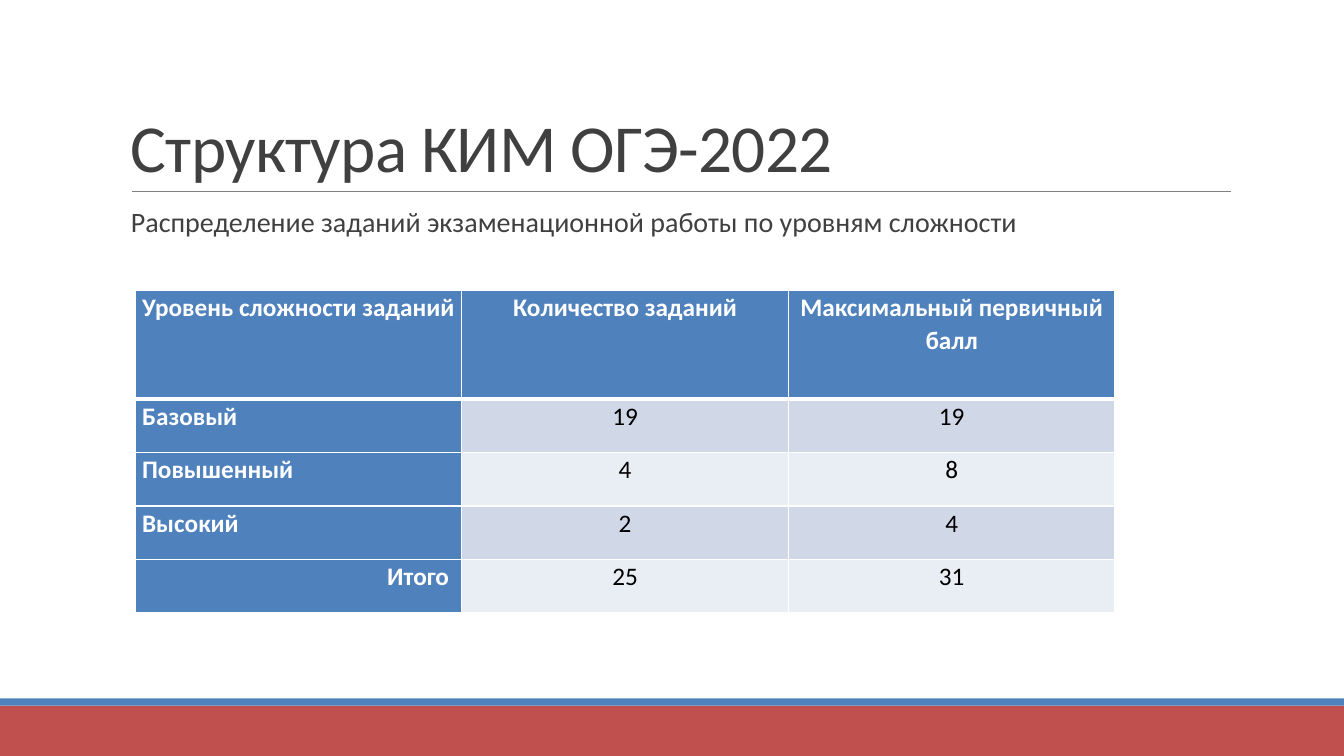
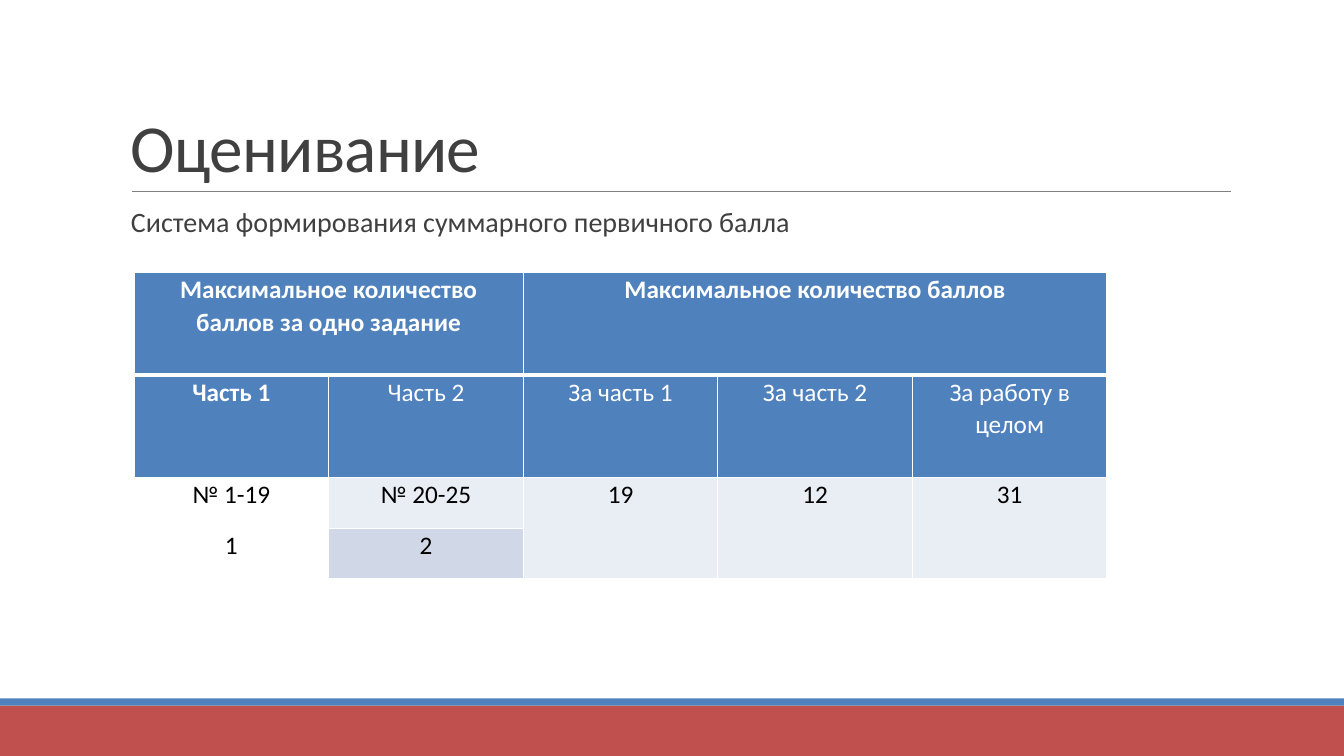
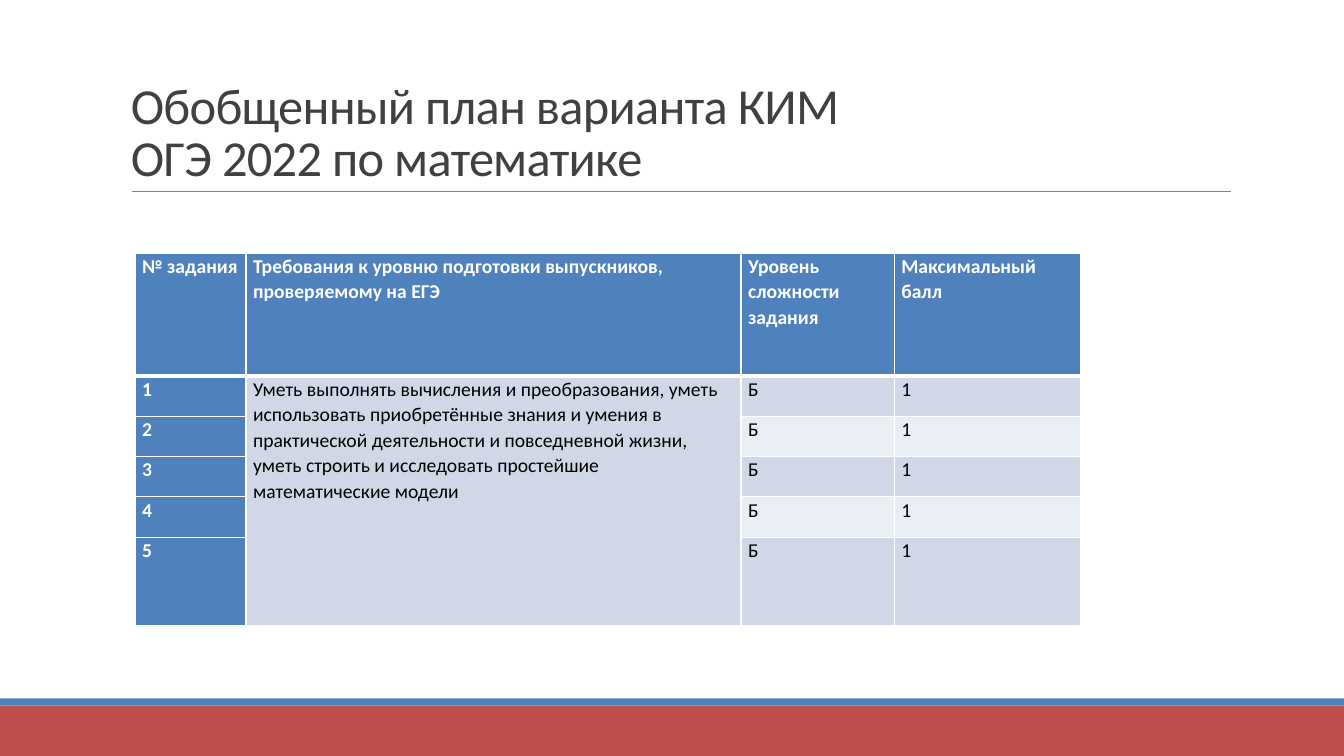
from dataclasses import dataclass
from typing import Optional

from lxml.etree import SubElement
from pptx import Presentation
from pptx.dml.color import RGBColor
from pptx.enum.shapes import MSO_CONNECTOR as Connector, MSO_SHAPE as Preset
from pptx.enum.text import MSO_ANCHOR as Anchor, PP_ALIGN as Align
from pptx.oxml.ns import qn
from pptx.util import Inches, Pt

# Shared look
FONT = "Calibri"
WHITE, BLACK, GREY, RULE = "FFFFFF", "000000", "404040", "808080"
BLUE, RED = "4F81BD", "C0504D"
BAND_DARK, BAND_LIGHT = "D0D8E8", "E9EDF4"
SLIDE_WIDTH, SLIDE_HEIGHT = 13.33, 7.5
TEXT_LEFT, TEXT_WIDTH = 1.2, 11
ALIGNMENTS = {"l": Align.LEFT, "c": Align.CENTER, "r": Align.RIGHT}


@dataclass(frozen=True)
class CellStyle:
    fill: Optional[str]
    color: str = BLACK
    bold: bool = False


# Letters used in the style grids of the tables
CELL_STYLES = {
    "H": CellStyle(BLUE, WHITE, True),
    "h": CellStyle(BLUE, WHITE),
    "d": CellStyle(BAND_DARK),
    "l": CellStyle(BAND_LIGHT),
    "n": CellStyle(None),
}


@dataclass(frozen=True)
class Span:
    row: int
    column: int
    rows: int
    columns: int


@dataclass(frozen=True)
class TableSpec:
    left: float
    top: float
    columns: list[float]
    heights: list[float]
    size: int
    texts: list[list[str]]
    styles: list[str]
    alignments: list[str]
    spans: tuple[Span, ...] = ()


@dataclass(frozen=True)
class SlideSpec:
    title: str
    table: TableSpec
    title_size: int = 48
    subtitle: str = ""


def rgb(color: str) -> RGBColor:
    return RGBColor.from_string(color)


def write_text(frame, text: str, *, size: float, color: str, bold: bool = False,
               align=Align.LEFT, line_spacing: float = 1.0, tracking: float = 0) -> None:
    frame.word_wrap = True
    paragraph = frame.paragraphs[0]
    paragraph.text = text
    paragraph.alignment = align
    paragraph.line_spacing = line_spacing
    for run in paragraph.runs:
        run.font.name = FONT
        run.font.size = Pt(size)
        run.font.bold = bold
        run.font.color.rgb = rgb(color)
        if tracking:
            run._r.get_or_add_rPr().set("spc", str(round(tracking * 100)))


def add_text_box(slide, text: str, top: float, height: float,
                 anchor=Anchor.TOP, **text_format) -> None:
    box = slide.shapes.add_textbox(
        Inches(TEXT_LEFT), Inches(top), Inches(TEXT_WIDTH), Inches(height))
    box.text_frame.vertical_anchor = anchor
    write_text(box.text_frame, text, color=GREY, **text_format)


def add_band(slide, top: float, height: float, color: str) -> None:
    band = slide.shapes.add_shape(
        Preset.RECTANGLE, 0, Inches(top), Inches(SLIDE_WIDTH), Inches(height))
    band.shadow.inherit = False
    band.fill.solid()
    band.fill.fore_color.rgb = rgb(color)
    band.line.fill.background()


def add_frame(slide) -> None:
    """Footer bands and the rule under the title."""
    add_band(slide, 7, 0.5, RED)
    add_band(slide, 6.93, 0.07, BLUE)
    rule = slide.shapes.add_connector(
        Connector.STRAIGHT, Inches(1.31), Inches(1.9), Inches(12.21), Inches(1.9))
    rule.line.color.rgb = rgb(RULE)
    rule.line.width = Pt(0.5)
    SubElement(rule._element.spPr, qn("a:effectLst"))


def set_borders(cell, top: float, bottom: float) -> None:
    properties = cell._tc.get_or_add_tcPr()
    for side, width in (("L", 1), ("R", 1), ("T", top), ("B", bottom)):
        line = SubElement(properties, qn(f"a:ln{side}"), w=str(Pt(width)))
        fill = SubElement(line, qn("a:solidFill"))
        SubElement(fill, qn("a:srgbClr"), val=WHITE)


def fill_cell(cell, color: Optional[str]) -> None:
    if color is None:
        cell.fill.background()
    else:
        cell.fill.solid()
        cell.fill.fore_color.rgb = rgb(color)


def add_table(slide, spec: TableSpec) -> None:
    frame = slide.shapes.add_table(
        len(spec.heights), len(spec.columns), Inches(spec.left), Inches(spec.top),
        Inches(sum(spec.columns)), Inches(sum(spec.heights)))
    table = frame.table
    table.first_row = table.horz_banding = False
    for column, width in zip(table.columns, spec.columns):
        column.width = Inches(width)
    for row, height in zip(table.rows, spec.heights):
        row.height = Inches(height)

    for row_index, texts in enumerate(spec.texts):
        for column_index, text in enumerate(texts):
            cell = table.cell(row_index, column_index)
            style = CELL_STYLES[spec.styles[row_index][column_index]]
            # A thick line parts the header row from the rest
            set_borders(cell, top=3 if row_index == 1 else 1,
                        bottom=3 if row_index == 0 else 1)
            fill_cell(cell, style.fill)
            cell.margin_left = cell.margin_right = Inches(0.07)
            cell.margin_top = cell.margin_bottom = 0
            write_text(cell.text_frame, text, size=spec.size, color=style.color,
                       bold=style.bold, line_spacing=1.07,
                       align=ALIGNMENTS[spec.alignments[row_index][column_index]])

    for span in spec.spans:
        table.cell(span.row, span.column).merge(
            table.cell(span.row + span.rows - 1, span.column + span.columns - 1))


def add_slide(presentation, spec: SlideSpec) -> None:
    slide = presentation.slides.add_slide(presentation.slide_layouts[6])
    add_frame(slide)
    add_text_box(slide, spec.title, 0.31, 1.59, Anchor.BOTTOM,
                 size=spec.title_size, line_spacing=0.85, tracking=-0.5)
    if spec.subtitle:
        add_text_box(slide, spec.subtitle, 2.02, 4.4, size=20, line_spacing=0.9)
    add_table(slide, spec.table)


# Content
LEVELS = TableSpec(
    left=1.34, top=2.88, columns=[3.24] * 3, heights=[1.08] + [0.53] * 4, size=18,
    texts=[
        ["Уровень сложности заданий", "Количество заданий", "Максимальный первичный балл"],
        ["Базовый", "19", "19"],
        ["Повышенный", "4", "8"],
        ["Высокий", "2", "4"],
        ["Итого ", "25", "31"],
    ],
    styles=["HHH"] + ["Hdd", "Hll"] * 2,
    alignments=["ccc"] + ["lcc"] * 3 + ["rcc"],
)

SCORES = TableSpec(
    left=1.33, top=2.7, columns=[1.93] * 5, heights=[1.02] * 2 + [0.5] * 2, size=18,
    texts=[
        ["Максимальное количество баллов за одно задание", "",
         "Максимальное количество баллов", "", ""],
        ["Часть 1", "Часть 2", "За часть 1", "За часть 2", "За работу в целом"],
        ["№ 1-19", "№ 20-25", "19", "12", "31"],
        ["1", "2", "", "", ""],
    ],
    styles=["HHHHH", "Hhhhh", "nllll", "ndlll"],
    alignments=["ccccc"] * 4,
    spans=(Span(0, 0, 1, 2), Span(0, 2, 1, 3),
           *(Span(2, column, 2, 1) for column in (2, 3, 4))),
)

SKILLS = ("Уметь выполнять вычисления и преобразования, уметь использовать "
          "приобретённые знания и умения в практической деятельности и повседневной "
          "жизни, уметь строить и исследовать простейшие математические модели")

PLAN = TableSpec(
    left=1.34, top=2.51, columns=[1.1, 4.91, 1.52, 1.85],
    heights=[1.22] + [0.4] * 4 + [0.88], size=14,
    texts=[
        ["№ задания", "Требования к уровню подготовки выпускников, проверяемому на ЕГЭ",
         "Уровень сложности задания", "Максимальный балл"],
        *([str(number), SKILLS if number == 1 else "", "Б", "1"] for number in range(1, 6)),
    ],
    styles=["HHHH"] + ["Hddd", "Hdll"] * 2 + ["Hddd"],
    alignments=["llll"] * 6,
    spans=(Span(1, 1, 5, 1),),
)

SLIDES = [
    SlideSpec("Структура КИМ ОГЭ-2022", LEVELS,
              subtitle="Распределение заданий экзаменационной работы по уровням сложности"),
    SlideSpec("Оценивание", SCORES,
              subtitle="Система формирования суммарного первичного балла"),
    SlideSpec("Обобщенный план варианта КИМ\vОГЭ 2022 по математике", PLAN, title_size=36),
]


def main() -> None:
    presentation = Presentation()
    presentation.slide_width = Inches(SLIDE_WIDTH)
    presentation.slide_height = Inches(SLIDE_HEIGHT)
    for spec in SLIDES:
        add_slide(presentation, spec)
    presentation.save("out.pptx")


if __name__ == "__main__":
    main()
